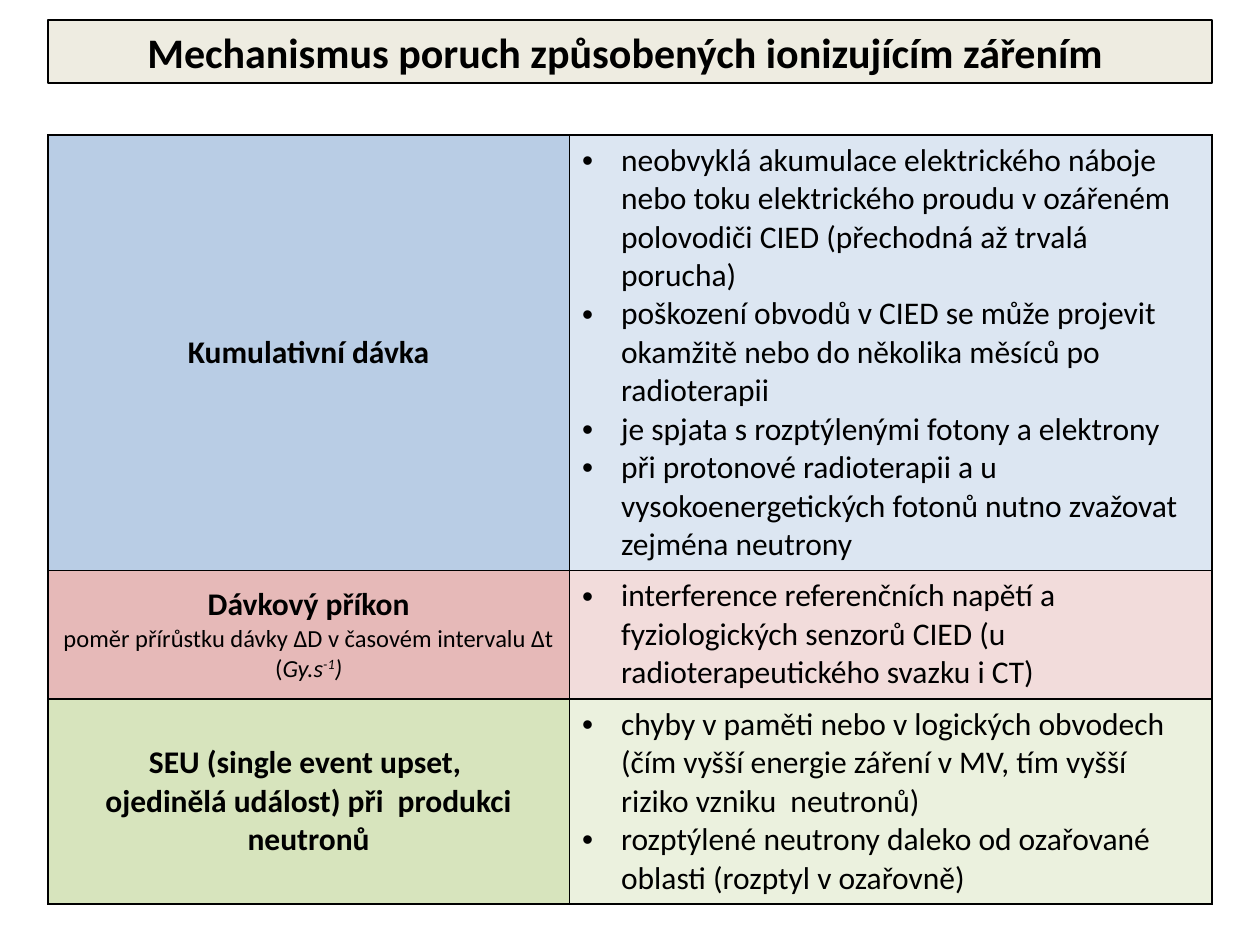
from lxml import etree
from pptx import Presentation
from pptx.dml.color import RGBColor
from pptx.enum.text import MSO_ANCHOR, MSO_AUTO_SIZE, PP_ALIGN
from pptx.oxml.ns import qn
from pptx.util import Inches, Pt

CENTER = PP_ALIGN.CENTER
MIDDLE = MSO_ANCHOR.MIDDLE
NO_AUTOFIT = MSO_AUTO_SIZE.NONE
FONT = "Calibri"
BLACK = RGBColor(0x00, 0x00, 0x00)
CREAM = RGBColor(0xEE, 0xEC, 0xE1)
BLUE = RGBColor(0xB9, 0xCD, 0xE5)
PALE_BLUE = RGBColor(0xDC, 0xE6, 0xF2)
RED = RGBColor(0xE6, 0xB9, 0xB8)
PALE_RED = RGBColor(0xF2, 0xDC, 0xDB)
GREEN = RGBColor(0xD7, 0xE4, 0xBD)
PALE_GREEN = RGBColor(0xEB, 0xF1, 0xDE)
LEFT, WIDTH = Inches(0.38), Inches(9.24)


def add_run(p, text, size=18, bold=False, italic=False):
    r = p.add_run()
    r.text = text
    r.font.name = FONT
    r.font.size = Pt(size)
    r.font.bold = bold
    r.font.italic = italic
    r.font.color.rgb = BLACK
    return r


def style_cell(cell, color):
    tc_pr = cell._tc.get_or_add_tcPr()
    for side in ("lnL", "lnR", "lnT", "lnB"):
        ln = etree.SubElement(tc_pr, qn("a:" + side), w=str(Pt(1)))
        line_fill = etree.SubElement(ln, qn("a:solidFill"))
        etree.SubElement(line_fill, qn("a:srgbClr"), val=str(BLACK))
    cell.fill.solid()
    cell.fill.fore_color.rgb = color
    cell.vertical_anchor = MIDDLE


prs = Presentation()
prs.slide_width, prs.slide_height = Inches(10), Inches(7.5)
s = prs.slides.add_slide(prs.slide_layouts[5])

title = s.shapes.title
title.left, title.top, title.width, title.height = LEFT, Inches(0.16), WIDTH, Inches(0.5)
title.fill.solid()
title.fill.fore_color.rgb = CREAM
title.line.color.rgb = BLACK
title.line.width = Pt(0.75)
tf = title.text_frame
tf.auto_size = NO_AUTOFIT
tf.vertical_anchor = MIDDLE
p = tf.paragraphs[0]
p.alignment = CENTER
add_run(p, "Mechanismus poruch způsobených ionizujícím zářením ", 24, bold=True)

rows = [
    (3.45, BLUE, PALE_BLUE, ["Kumulativní dávka"], [
        "neobvyklá akumulace elektrického náboje nebo toku elektrického proudu "
        "v ozářeném polovodiči CIED (přechodná až trvalá porucha)",
        "poškození obvodů v CIED se může projevit okamžitě nebo do několika měsíců po radioterapii",
        "je spjata s rozptýlenými fotony a elektrony",
        "při protonové radioterapii a u vysokoenergetických fotonů nutno zvažovat zejména neutrony",
    ]),
    (1.02, RED, PALE_RED, ["Dávkový příkon"], [
        "interference referenčních napětí a fyziologických senzorů CIED "
        "(u radioterapeutického svazku i CT)",
    ]),
    (1.63, GREEN, PALE_GREEN,
     ["SEU (single event upset, ", "ojedinělá událost) při  produkci neutronů"], [
        "chyby v paměti nebo v logických obvodech (čím vyšší energie záření v MV, "
        "tím vyšší riziko vzniku  neutronů)",
        "rozptýlené neutrony daleko od ozařované oblasti (rozptyl v ozařovně)",
    ]),
]

height = Inches(sum(row[0] for row in rows))
table = s.shapes.add_table(len(rows), 2, LEFT, Inches(1.07), WIDTH, height).table
table.first_row = False
table.horz_banding = False
table.columns[0].width = Inches(4.14)
table.columns[1].width = Inches(5.1)

for i, (row_height, color, pale, heading, bullets) in enumerate(rows):
    table.rows[i].height = Inches(row_height)
    name_cell, effect_cell = table.cell(i, 0), table.cell(i, 1)
    style_cell(name_cell, color)
    style_cell(effect_cell, pale)

    p = name_cell.text_frame.paragraphs[0]
    p.alignment = CENTER
    for j, text in enumerate(heading):
        if j:
            p.add_line_break()
        add_run(p, text, bold=True)

    tf = effect_cell.text_frame
    for j, text in enumerate(bullets):
        p = tf.add_paragraph() if j else tf.paragraphs[0]
        p_pr = p._p.get_or_add_pPr()
        p_pr.set("marL", str(Inches(0.31)))
        p_pr.set("indent", str(Inches(-0.31)))
        etree.SubElement(p_pr, qn("a:buFont"), typeface="Arial")
        etree.SubElement(p_pr, qn("a:buChar"), char="•")
        add_run(p, text)

p = table.cell(1, 0).text_frame.add_paragraph()
p.alignment = CENTER
add_run(p, "poměr přírůstku dávky ΔD v časovém intervalu Δt (", 14)
add_run(p, "Gy.s", 14, italic=True)
exponent = add_run(p, "-1", 14, italic=True)
exponent._r.get_or_add_rPr().set("baseline", "30000")
add_run(p, ")", 14, italic=True)

prs.save("out.pptx")
